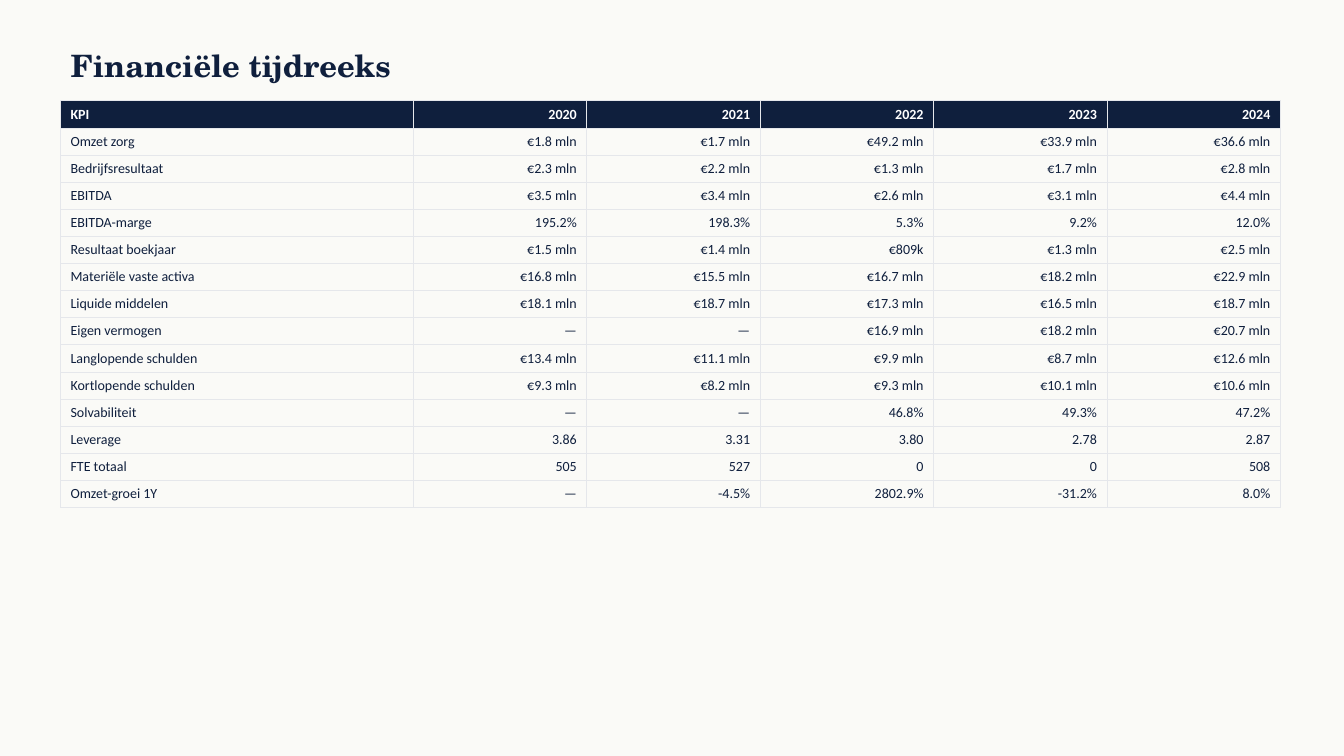
from lxml import etree
from pptx import Presentation
from pptx.dml.color import RGBColor
from pptx.enum.text import MSO_ANCHOR, PP_ALIGN
from pptx.oxml.ns import qn
from pptx.util import Inches, Pt

LEFT, RIGHT = PP_ALIGN.LEFT, PP_ALIGN.RIGHT
MIDDLE = MSO_ANCHOR.MIDDLE
NAVY = RGBColor(0x0F, 0x1F, 0x3D)
WHITE = RGBColor(0xFF, 0xFF, 0xFF)
PAPER = RGBColor(0xFA, 0xFA, 0xF7)
GRID = RGBColor(0xE5, 0xE7, 0xEB)

KPIS = [
    ["KPI", "2020", "2021", "2022", "2023", "2024"],
    ["Omzet zorg", "€1.8 mln", "€1.7 mln", "€49.2 mln", "€33.9 mln", "€36.6 mln"],
    ["Bedrijfsresultaat", "€2.3 mln", "€2.2 mln", "€1.3 mln", "€1.7 mln", "€2.8 mln"],
    ["EBITDA", "€3.5 mln", "€3.4 mln", "€2.6 mln", "€3.1 mln", "€4.4 mln"],
    ["EBITDA-marge", "195.2%", "198.3%", "5.3%", "9.2%", "12.0%"],
    ["Resultaat boekjaar", "€1.5 mln", "€1.4 mln", "€809k", "€1.3 mln", "€2.5 mln"],
    ["Materiële vaste activa", "€16.8 mln", "€15.5 mln", "€16.7 mln", "€18.2 mln", "€22.9 mln"],
    ["Liquide middelen", "€18.1 mln", "€18.7 mln", "€17.3 mln", "€16.5 mln", "€18.7 mln"],
    ["Eigen vermogen", "—", "—", "€16.9 mln", "€18.2 mln", "€20.7 mln"],
    ["Langlopende schulden", "€13.4 mln", "€11.1 mln", "€9.9 mln", "€8.7 mln", "€12.6 mln"],
    ["Kortlopende schulden", "€9.3 mln", "€8.2 mln", "€9.3 mln", "€10.1 mln", "€10.6 mln"],
    ["Solvabiliteit", "—", "—", "46.8%", "49.3%", "47.2%"],
    ["Leverage", "3.86", "3.31", "3.80", "2.78", "2.87"],
    ["FTE totaal", "505", "527", "0", "0", "508"],
    ["Omzet-groei 1Y", "—", "-4.5%", "2802.9%", "-31.2%", "8.0%"],
]


class Deck:
    """Holds the style and the current slide."""

    title_font = "TeX Gyre Schola"
    body_font = "Calibri"

    def __init__(self):
        self.prs = Presentation()
        self.prs.slide_width, self.prs.slide_height = Inches(13.33), Inches(7.5)
        self.s = self.prs.slides.add_slide(self.prs.slide_layouts[5])
        fill = self.s.background.fill
        fill.solid()
        fill.fore_color.rgb = PAPER

    def set_text(self, tf, text, font, size, color, bold, align):
        tf.text = text
        p = tf.paragraphs[0]
        p.alignment = align
        for r in p.runs:
            r.font.name, r.font.size, r.font.bold = font, Pt(size), bold
            r.font.color.rgb = color

    def title(self, text, x, y, w, h):
        sp = self.s.shapes.title
        sp.left, sp.top, sp.width, sp.height = map(Inches, (x, y, w, h))
        tf = sp.text_frame
        tf.word_wrap = True
        tf.vertical_anchor = MIDDLE
        self.set_text(tf, text, self.title_font, 22, NAVY, True, LEFT)

    def borders(self, cell):
        tc_pr = cell._tc.get_or_add_tcPr()
        for i, side in enumerate(("lnL", "lnR", "lnT", "lnB")):
            ln = etree.Element(qn(f"a:{side}"), w=str(Pt(0.5)))
            fill = etree.SubElement(ln, qn("a:solidFill"))
            etree.SubElement(fill, qn("a:srgbClr"), val=str(GRID))
            tc_pr.insert(i, ln)

    def table(self, rows, x, y, widths, row_height):
        frame = self.s.shapes.add_table(
            len(rows), len(widths), Inches(x), Inches(y),
            Inches(sum(widths)), Inches(row_height * len(rows)))
        table = frame.table
        table.horz_banding = False
        for column, width in zip(table.columns, widths):
            column.width = Inches(width)
        for i, row in enumerate(rows):
            header = i == 0
            for j, text in enumerate(row):
                cell = table.cell(i, j)
                cell.fill.solid()
                cell.fill.fore_color.rgb = NAVY if header else PAPER
                self.borders(cell)
                self.set_text(cell.text_frame, text, self.body_font, 10,
                              WHITE if header else NAVY, header,
                              RIGHT if j else LEFT)


def main():
    deck = Deck()
    deck.title("Financiële tijdreeks", 0.6, 0.4, 12, 0.5)
    deck.table(KPIS, 0.6, 1, [3.5] + [1.72] * 5, 0.25)
    deck.prs.save("out.pptx")


if __name__ == "__main__":
    main()
